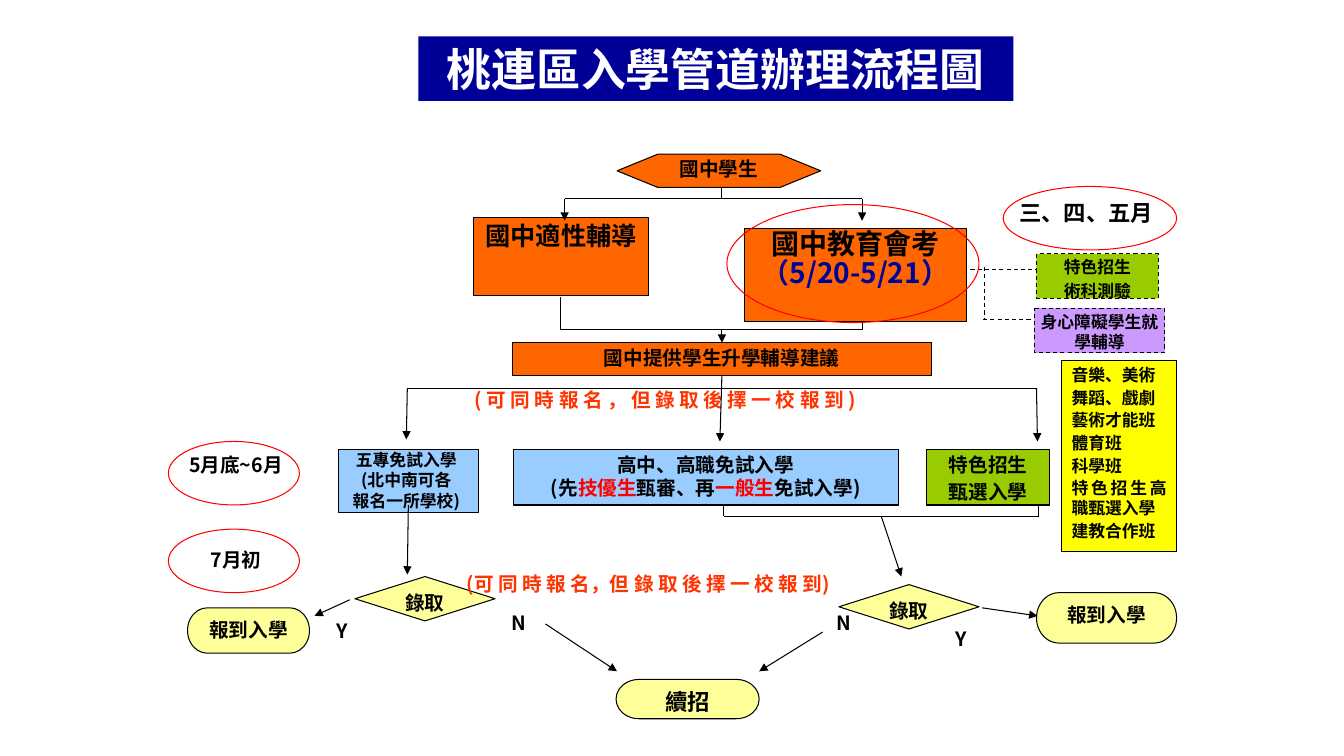
from lxml import etree
from pptx import Presentation
from pptx.dml.color import RGBColor
from pptx.enum import dml, shapes, text
from pptx.oxml import ns
from pptx.util import Inches, Pt

FONT = "Noto Sans CJK SC"
BLACK, RED, NAVY = "000000", "FF0000", "000099"
ORANGE, BLUE, GREEN, CREAM = "FF6600", "99CCFF", "99CC00", "FFFF99"
CENTER, LEFT, JUSTIFY = text.PP_ALIGN.CENTER, text.PP_ALIGN.LEFT, text.PP_ALIGN.JUSTIFY
KIND = shapes.MSO_SHAPE
PROCESS, TERMINATOR = KIND.FLOWCHART_PROCESS, KIND.FLOWCHART_TERMINATOR


def write(frame, lines, size=14, color=BLACK, accent=RED, align=CENTER,
          gap=0.2, spacing=1.0, margins=(0.06, 0.03, 0.06), font=FONT):
    """Fill a text frame; every second part of a line split at | takes the accent.

    gap is the space before later paragraphs as a share of the font size;
    margins are left, top and bottom, right.
    """
    frame.word_wrap = True
    frame.vertical_anchor = text.MSO_ANCHOR.TOP
    left, vertical, right = margins
    frame.margin_left, frame.margin_right = Inches(left), Inches(right)
    frame.margin_top = frame.margin_bottom = Inches(vertical)
    for index, line in enumerate(lines):
        para = frame.add_paragraph() if index else frame.paragraphs[0]
        para.alignment = align
        para.line_spacing = spacing
        para.space_before = Pt(gap * size if index else 0)
        for place, part in enumerate(line.split("|")):
            if not part:
                continue
            span = para.add_run()
            span.text = part
            span.font.size = Pt(size)
            span.font.bold = True
            span.font.name = font
            span.font.color.rgb = RGBColor.from_string(accent if place % 2 else color)
            etree.SubElement(span.font._element, ns.qn("a:ea"), typeface=font)


def draw_line(x1, y1, x2, y2, arrow=False, dashed=False):
    line = page.shapes.add_connector(shapes.MSO_CONNECTOR.STRAIGHT,
                                     *map(Inches, (x1, y1, x2, y2)))
    line.line.color.rgb = RGBColor.from_string(BLACK)
    line.line.width = Pt(0.75)
    if dashed:
        line.line.dash_style = dml.MSO_LINE.DASH
    if arrow:
        etree.SubElement(line.line._get_or_add_ln(), ns.qn("a:tailEnd"), type="triangle")
    etree.SubElement(line._element.spPr, ns.qn("a:effectLst"))


deck = Presentation()
deck.slide_width, deck.slide_height = Inches(13.33), Inches(7.5)
page = deck.slides.add_slide(deck.slide_layouts[5])

title = page.shapes.title
title.left, title.top, title.width, title.height = map(Inches, (4.15, 0.36, 5.9, 0.64))
title.fill.solid()
title.fill.fore_color.rgb = RGBColor.from_string(NAVY)
write(title.text_frame, ["桃連區入學管道辦理流程圖"], 32, "FFFFFF",
      margins=(0.1, 0.05, 0.1), font="Calibri")
title.text_frame.vertical_anchor = text.MSO_ANCHOR.MIDDLE

# Dashed branches from the exam to the special routes, behind the boxes
for ends in [(8.55, 2.67, 10.28, 2.67), (9.76, 2.65, 9.76, 3.17), (9.75, 3.17, 10.23, 3.17)]:
    draw_line(*ends, dashed=True)

# Steps: kind, place, fill, lines, text options
steps = [
    (KIND.FLOWCHART_PREPARATION, (6.12, 1.53, 2.02, 0.33), ORANGE, ["國中學生"], {}),
    (PROCESS, (4.7, 2.16, 1.73, 0.77), ORANGE, ["國中適性輔導"], {"size": 18}),
    (PROCESS, (7.38, 2.27, 2.21, 0.92), ORANGE, ["國中教育會考", "|（5/20-5/21）"],
     {"size": 20, "accent": NAVY, "gap": 0, "spacing": 0.85}),
    (PROCESS, (5.08, 3.4, 4.16, 0.33), ORANGE, ["國中提供學生升學輔導建議"], {}),
    (PROCESS, (3.36, 4.46, 1.39, 0.62), BLUE, ["五專免試入學", "(北中南可各", "報名一所學校)"],
     {"size": 12, "spacing": 0.85, "margins": (0.01, 0.03, 0.06)}),
    (PROCESS, (5.09, 4.46, 3.82, 0.55), BLUE,
     ["高中、高職免試入學", "(先|技優生|甄審、再|一般生|免試入學)"], {"gap": 0}),
    (PROCESS, (9.19, 4.46, 1.22, 0.55), GREEN, ["特色招生", "甄選入學"], {}),
    (KIND.FLOWCHART_DECISION, (3.52, 5.72, 1.39, 0.44), CREAM, ["錄取"], {}),
    (KIND.FLOWCHART_DECISION, (8.32, 5.8, 1.39, 0.44), CREAM, ["錄取"], {}),
    (TERMINATOR, (1.86, 6.03, 1.21, 0.45), CREAM, ["報到入學"], {}),
    (TERMINATOR, (10.28, 5.88, 1.39, 0.5), CREAM, ["報到入學"], {}),
    (TERMINATOR, (6.11, 6.74, 1.42, 0.39), CREAM, ["續招"], {"size": 16}),
    (KIND.RECTANGLE, (10.28, 2.52, 1.21, 0.44), GREEN, ["特色招生", "術科測驗"],
     {"size": 12, "margins": (0.01, 0.03, 0.01)}),
    (PROCESS, (10.26, 3.06, 1.29, 0.44), "CC99FF", ["身心障礙學生就學輔導"], {"size": 12}),
    (KIND.RECTANGLE, (10.53, 3.58, 1.14, 1.89), "FFFF00",
     ["音樂、美術", "舞蹈、戲劇", "藝術才能班", "體育班", "科學班", "特色招生高職甄選入學", "建教合作班"],
     {"size": 12, "align": JUSTIFY, "spacing": 0.96, "margins": (0.1, 0.05, 0.1)}),
]
dashed_steps = ["術科測驗", "身心障礙學生就學輔導"]
for kind, place, fill, lines, options in steps:
    box = page.shapes.add_shape(kind, *map(Inches, place))
    box.shadow.inherit = False
    box.fill.solid()
    box.fill.fore_color.rgb = RGBColor.from_string(fill)
    box.line.color.rgb = RGBColor.from_string(BLACK)
    box.line.width = Pt(0.75)
    if lines[-1] in dashed_steps:
        box.line.dash_style = dml.MSO_LINE.DASH
    write(box.text_frame, lines, **options)

# Labels: place, wording, text options
note = {"color": "FF3300", "align": LEFT, "margins": (0.01, 0.03, 0.01)}
labels = [
    ((4.7, 3.82, 5.67, 0.33), "( 可 同 時 報 名 ， 但 錄 取 後 擇 一 校 報 到 )", note),
    ((4.62, 5.64, 4.51, 0.22), "(可 同 時 報 名，但 錄 取 後 擇 一 校 報 到)", note),
    ((10.01, 1.93, 1.65, 0.37), "三、四、五月",
     {"size": 16, "align": LEFT, "margins": (0.1, 0.05, 0.1)}),
    ((1.67, 4.46, 1.34, 0.35), "5月底~6月", {}),
    ((1.67, 5.41, 1.34, 0.35), "7月初", {}),
]
for x, y, answer in [(3.28, 6.11, "Y"), (5.01, 6.03, "N"), (8.24, 6.03, "N"), (9.42, 6.19, "Y")]:
    labels.append(((x, y, 0.35, 0.22), answer, {"align": LEFT}))
for place, wording, options in labels:
    box = page.shapes.add_textbox(*map(Inches, place))
    write(box.text_frame, [wording], **options)

plain_lines = [
    (7.16, 1.86, 7.16, 1.97), (5.6, 1.97, 8.55, 1.97),
    (5.56, 2.95, 5.56, 3.27), (8.55, 3.18, 8.55, 3.27), (5.56, 3.27, 8.56, 3.27),
    (4.04, 3.85, 10.28, 3.85),
    (7.18, 5.01, 7.18, 5.12), (10.3, 5.01, 10.3, 5.12), (7.18, 5.12, 10.3, 5.12),
]
arrows = [
    (5.6, 1.97, 5.6, 2.19), (8.55, 1.97, 8.55, 2.19), (7.16, 3.26, 7.16, 3.4),
    (4.04, 3.85, 4.03, 4.36), (7.16, 3.73, 7.14, 4.38), (10.28, 3.85, 10.29, 4.38),
    (4.05, 5.01, 4.04, 5.7), (8.74, 5.12, 8.94, 5.72),
    (3.47, 5.95, 3.12, 6.11), (9.74, 6.03, 10.29, 6.11),
    (5.41, 6.19, 6.12, 6.66), (8.16, 6.27, 7.53, 6.66),
]
for ends in plain_lines:
    draw_line(*ends)
for ends in arrows:
    draw_line(*ends, arrow=True)

# Red rings around the dates
for place in [(1.67, 4.38, 1.3, 0.63), (1.67, 5.25, 1.3, 0.63),
              (7.21, 2.03, 2.5, 1.17), (9.95, 1.85, 1.72, 0.63)]:
    ring = page.shapes.add_shape(KIND.OVAL, *map(Inches, place))
    ring.shadow.inherit = False
    ring.fill.background()
    ring.line.color.rgb = RGBColor.from_string(RED)
    ring.line.width = Pt(0.75)

deck.save("out.pptx")
